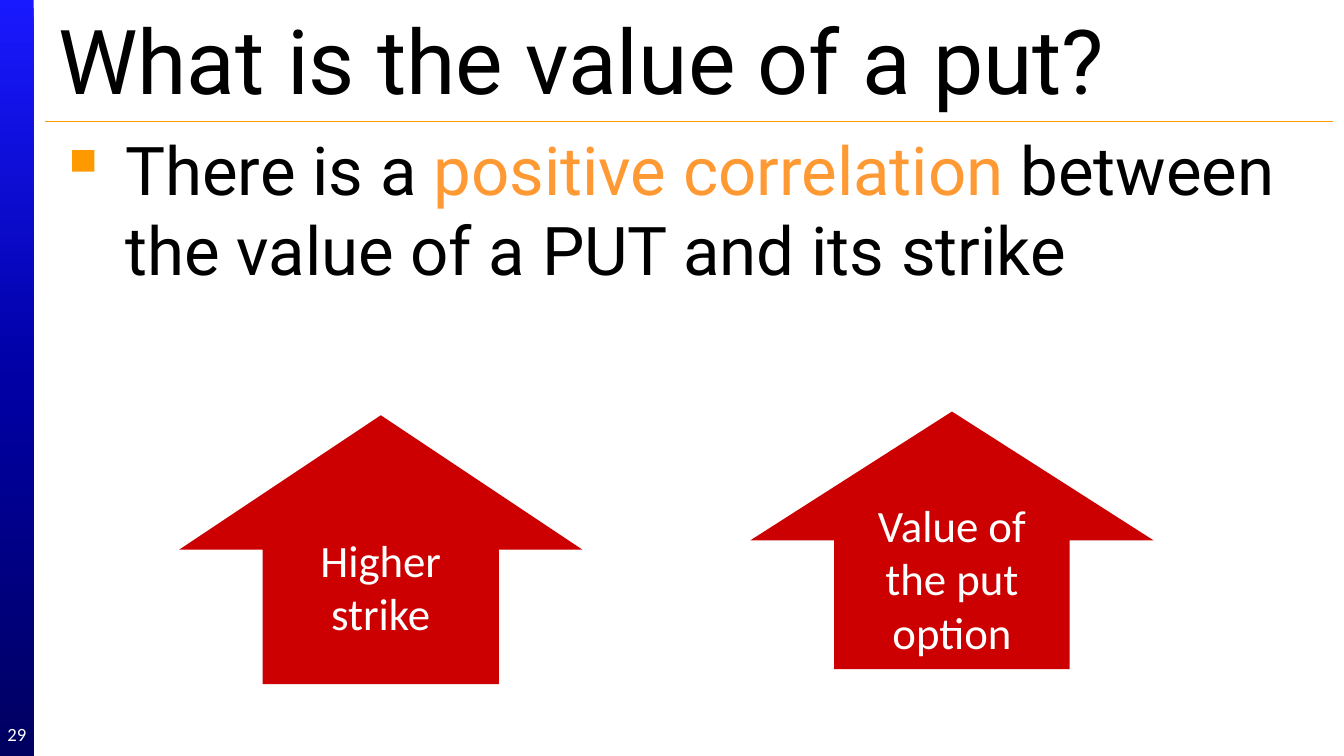
from copy import deepcopy
from lxml.etree import SubElement
from pptx import Presentation
from pptx.dml.color import RGBColor
from pptx.enum.shapes import MSO_CONNECTOR, MSO_SHAPE
from pptx.enum.text import MSO_ANCHOR, PP_ALIGN
from pptx.oxml.ns import qn
from pptx.util import Pt

WIDE, HIGH, SIDE = 720, 405, 18
RED, GOLD = "CC0000", "FF9900"
TITLE = "What is the value of a put?"
POINT = [
    ("There is a ", "000000"),
    ("positive correlation ", "FF9933"),
    ("between the value of a PUT and its strike", "000000"),
]
STOPS = [(0, "1919FF"), (0.5, "0000A5"), (1, "000060")]
BLOCKS = [
    (MSO_SHAPE.UP_ARROW, (402, 220.5, 216, 138), 0.584, "Value of the put option"),
    (MSO_SHAPE.UP_ARROW, (96, 222.5, 216, 144), 0.586, ""),
    (MSO_SHAPE.RECTANGLE, (147, 278, 114, 72), None, "Higher\nstrike"),
]
HEAD = {"name": "Roboto", "size": Pt(48)}
BODY = {"name": "Roboto", "size": Pt(36)}
LABEL = {"name": "Calibri", "size": Pt(24)}
SMALL = {"name": "Calibri", "size": Pt(10)}


def paint(color, code):
    color.rgb = RGBColor.from_string(code)


def style(font, look, code):
    for key, value in look.items():
        setattr(font, key, value)
    paint(font.color, code)


def fill_text(frame, text, look, code, align):
    frame.text = text
    frame.word_wrap = True
    frame.vertical_anchor = MSO_ANCHOR.MIDDLE
    for para in frame.paragraphs:
        para.alignment = align
        for run in para.runs:
            style(run.font, look, code)


def add_shape(slide, kind, box):
    shape = slide.shapes.add_shape(kind, *map(Pt, box))
    shape.shadow.inherit = False
    shape.line.fill.background()
    return shape


def add_bar(slide):
    bar = add_shape(slide, MSO_SHAPE.RECTANGLE, (0, 0, SIDE, HIGH))
    bar.fill.gradient()
    bar.fill.gradient_angle = 270
    stops = bar.element.xpath(".//a:gsLst")[0]
    stops.append(deepcopy(stops[-1]))
    for stop, (place, code) in zip(bar.fill.gradient_stops, STOPS):
        stop.position = place
        paint(stop.color, code)


def add_rule(slide):
    ends = map(Pt, (24, 65, 714, 65))
    rule = slide.shapes.add_connector(MSO_CONNECTOR.STRAIGHT, *ends)
    paint(rule.line.color, GOLD)
    rule.line.width = Pt(0.75)
    SubElement(rule.element.spPr, qn("a:effectLst"))


def add_title(slide):
    title = slide.shapes.title
    title.left, title.top, title.width, title.height = map(Pt, (24, 4.5, 690, 54))
    fill_text(title.text_frame, TITLE, HEAD, "000000", PP_ALIGN.LEFT)


def add_point(slide):
    frame = slide.shapes.add_textbox(*map(Pt, (24, 65, 672, 312))).text_frame
    frame.word_wrap = True
    para = frame.paragraphs[0]
    for text, code in POINT:
        run = para.add_run()
        run.text = text
        style(run.font, BODY, code)
    props = para._p.get_or_add_pPr()
    props.set("marL", str(Pt(36)))
    props.set("indent", str(-Pt(36)))
    tint = SubElement(props, qn("a:buClr"))
    SubElement(tint, qn("a:srgbClr"), val=GOLD)
    SubElement(props, qn("a:buChar"), char="▪")


def add_page(slide):
    frame = slide.shapes.add_textbox(*map(Pt, (0, 382.5, SIDE, 21.5))).text_frame
    for edge in ("left", "right", "top", "bottom"):
        setattr(frame, f"margin_{edge}", 0)
    fill_text(frame, "29", SMALL, "FFFFFF", PP_ALIGN.CENTER)


def add_block(slide, kind, box, stem, text):
    block = add_shape(slide, kind, box)
    block.fill.solid()
    paint(block.fill.fore_color, RED)
    if stem:
        block.adjustments[0] = stem
        block.adjustments[1] = 0.5
    if text:
        fill_text(block.text_frame, text, LABEL, "FFFFFF", PP_ALIGN.CENTER)


def main():
    deck = Presentation()
    deck.slide_width, deck.slide_height = Pt(WIDE), Pt(HIGH)
    slide = deck.slides.add_slide(deck.slide_layouts[5])
    for add in (add_bar, add_rule, add_title, add_point, add_page):
        add(slide)
    for block in BLOCKS:
        add_block(slide, *block)
    deck.save("out.pptx")


if __name__ == "__main__":
    main()
